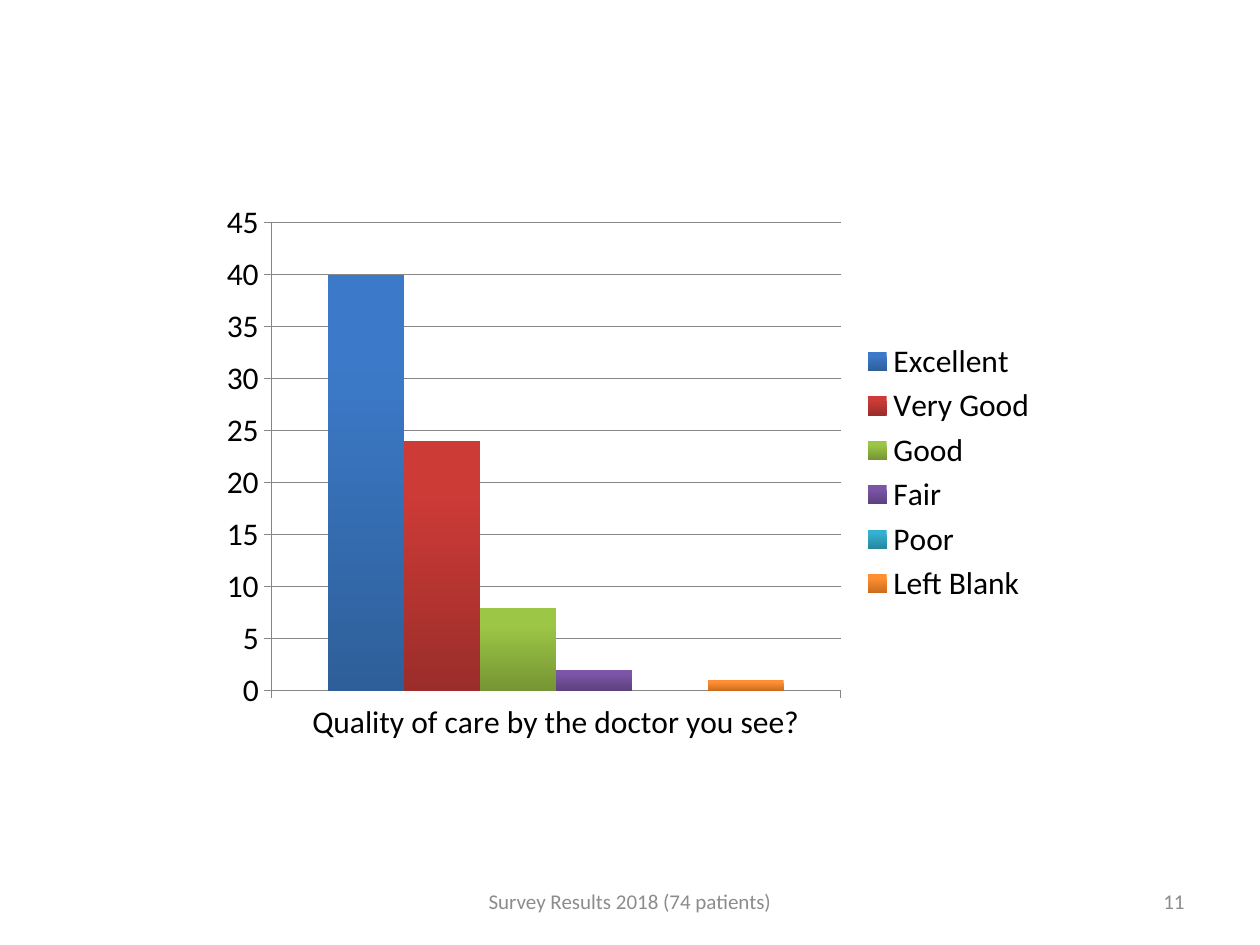
from pptx import Presentation
from pptx.chart.data import CategoryChartData
from pptx.dml.color import RGBColor
from pptx.enum.chart import XL_CHART_TYPE, XL_LEGEND_POSITION, XL_TICK_MARK
from pptx.enum.text import MSO_ANCHOR, PP_ALIGN
from pptx.util import Pt

COLUMNS = XL_CHART_TYPE.COLUMN_CLUSTERED
LEGEND_RIGHT = XL_LEGEND_POSITION.RIGHT
TICK_OUT = XL_TICK_MARK.OUTSIDE
MIDDLE = MSO_ANCHOR.MIDDLE
CENTER, RIGHT = PP_ALIGN.CENTER, PP_ALIGN.RIGHT

FONT = "Calibri"
BLACK, FOOTER_GRAY, LINE_GRAY = "000000", "8C8C8C", "868686"
QUESTION = "Quality of care by the doctor you see?"

# Rating, number of answers, colour at the top and the bottom of the column
RATINGS = [
    ("Excellent", 40, "3C7AC9", "2E5F99"),
    ("Very Good", 24, "CD3B37", "9B2D2A"),
    ("Good", 8, "9CC746", "769535"),
    ("Fair", 2, "7C55A8", "5D417E"),
    ("Poor", 0, "35B0D0", "2787A0"),
    ("Left Blank", 1, "FF8F32", "CB6C1D"),
]


def color(hex_string):
    return RGBColor.from_string(hex_string)


def style_font(font, size, hex_string):
    font.name = FONT
    font.size = Pt(size)
    font.color.rgb = color(hex_string)


def style_line(line):
    line.color.rgb = color(LINE_GRAY)
    line.width = Pt(0.75)


def add_ratings_chart(slide, left, top, width, height):
    answers = CategoryChartData()
    answers.categories = [QUESTION]
    for rating, count, _, _ in RATINGS:
        answers.add_series(rating, [count])
    chart = slide.shapes.add_chart(
        COLUMNS, Pt(left), Pt(top), Pt(width), Pt(height), answers).chart
    chart.has_title = False
    style_font(chart.font, 18, BLACK)

    # Legend
    chart.has_legend = True
    chart.legend.position = LEGEND_RIGHT
    chart.legend.include_in_layout = False

    # Axes and gridlines
    counts = chart.value_axis
    counts.minimum_scale, counts.maximum_scale, counts.major_unit = 0, 45, 5
    counts.has_major_gridlines = True
    style_line(counts.major_gridlines.format.line)
    for axis in (chart.category_axis, counts):
        axis.major_tick_mark = TICK_OUT
        style_line(axis.format.line)

    # Columns, shaded from top to bottom
    plot = chart.plots[0]
    plot.gap_width = 150
    plot.overlap = 0
    plot.vary_by_categories = False
    for column, (_, _, top_color, bottom_color) in zip(plot.series, RATINGS):
        column.invert_if_negative = False
        fill = column.format.fill
        fill.gradient()
        fill.gradient_angle = 270
        upper, lower = fill.gradient_stops
        upper.position, lower.position = 0.2, 1
        upper.color.rgb = color(top_color)
        lower.color.rgb = color(bottom_color)


def add_footer_text(slide, text, alignment, left, top, width, height):
    box = slide.shapes.add_textbox(Pt(left), Pt(top), Pt(width), Pt(height))
    frame = box.text_frame
    frame.word_wrap = True
    frame.vertical_anchor = MIDDLE
    paragraph = frame.paragraphs[0]
    paragraph.text = text
    paragraph.alignment = alignment
    style_font(paragraph.font, 12, FOOTER_GRAY)


def main():
    deck = Presentation()
    deck.slide_width, deck.slide_height = Pt(720), Pt(540)
    slide = deck.slides.add_slide(deck.slide_layouts[6])

    add_ratings_chart(slide, 120, 110, 480, 320)

    # Footer: slide number and survey name
    add_footer_text(slide, "11", RIGHT, 516, 500.5, 168, 28.75)
    add_footer_text(slide, "Survey Results 2018 (74 patients)", CENTER,
                    246, 500.5, 228, 28.75)

    deck.save("out.pptx")


if __name__ == "__main__":
    main()
